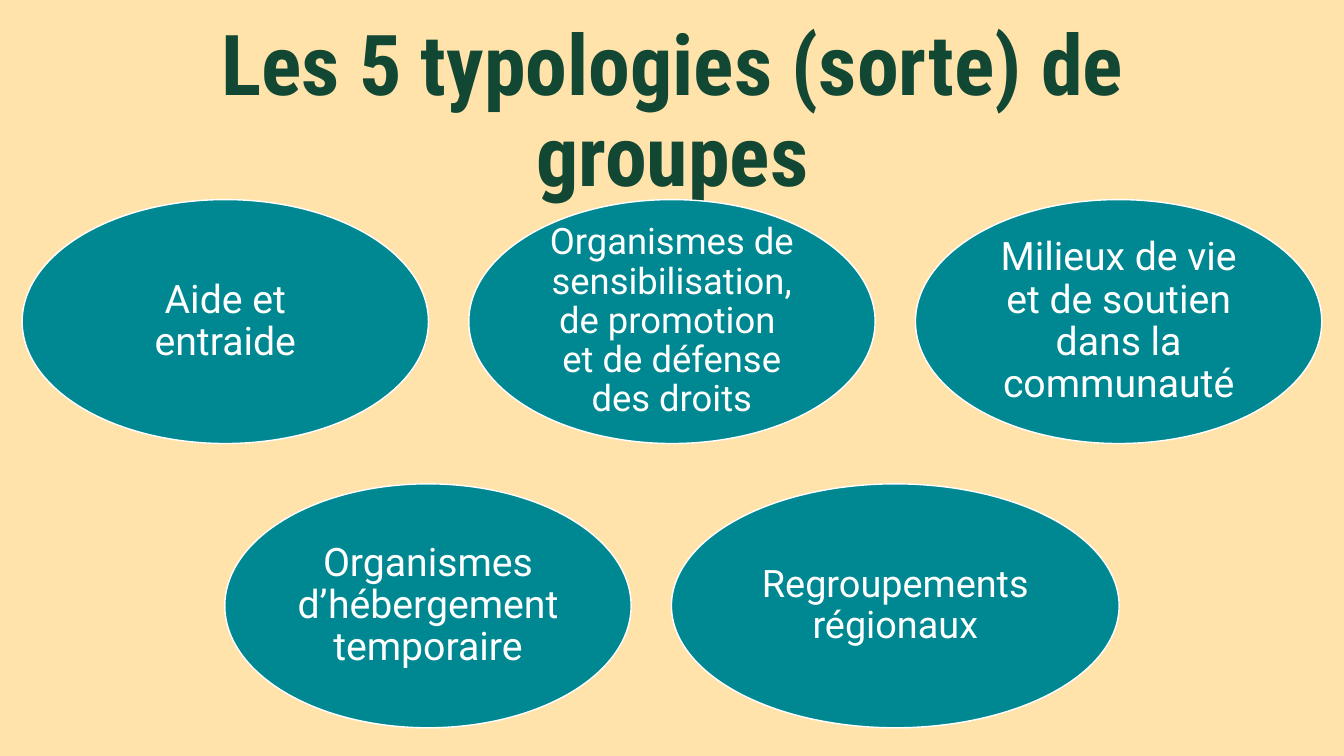
"""Build the slide on the five types of community groups."""
from dataclasses import dataclass

from pptx import Presentation
from pptx.dml.color import RGBColor
from pptx.enum.shapes import MSO_SHAPE
from pptx.enum.text import MSO_ANCHOR, PP_ALIGN
from pptx.slide import Slide
from pptx.text.text import TextFrame
from pptx.util import Inches, Pt

OVAL = MSO_SHAPE.OVAL
MIDDLE = MSO_ANCHOR.MIDDLE
CENTER = PP_ALIGN.CENTER


@dataclass(frozen=True)
class Theme:
    background: RGBColor = RGBColor.from_string("FFE3AB")
    heading: RGBColor = RGBColor.from_string("124733")
    teal: RGBColor = RGBColor.from_string("008892")
    white: RGBColor = RGBColor.from_string("FFFFFF")
    heading_font: str = "Roboto Condensed"
    body_font: str = "Roboto"
    heading_size: int = 60
    body_size: int = 28
    regional_size: int = 27
    advocacy_size: int = 26


@dataclass(frozen=True)
class GroupType:
    label: str
    size: int
    inset: float = 0.12
    width: float = 4.03


THEME = Theme()
SLIDE_WIDTH, SLIDE_HEIGHT = 13.33, 7.5
ROWS_TOP = 1.98
OVAL_HEIGHT = 2.42
GAP = 0.4
ROWS: list[list[GroupType]] = [
    [
        GroupType("Aide et entraide", THEME.body_size),
        GroupType(
            "Organismes de sensibilisation, de promotion \net de défense des droits",
            THEME.advocacy_size,
            inset=0.11,
        ),
        GroupType("Milieux de vie et de soutien dans la communauté", THEME.body_size),
    ],
    [
        GroupType("Organismes d’hébergement temporaire", THEME.body_size),
        GroupType("Regroupements régionaux", THEME.regional_size, inset=0.11, width=4.44),
    ],
]


def write_centred(
    frame: TextFrame, text: str, font: str, size: int, color: RGBColor, bold: bool = False
) -> None:
    """Fill a frame with one centred, wrapped paragraph."""
    frame.word_wrap = True
    frame.vertical_anchor = MIDDLE
    paragraph = frame.paragraphs[0]
    paragraph.text = text
    paragraph.alignment = CENTER
    paragraph.line_spacing = 0.9
    for run in paragraph.runs:
        run.font.name = font
        run.font.size = Pt(size)
        run.font.color.rgb = color
        run.font.bold = bold


def draw_heading(slide: Slide) -> None:
    """Draw the slide heading."""
    heading = slide.shapes.add_textbox(Inches(0.92), Inches(0.4), Inches(11.5), Inches(1.45))
    write_centred(
        heading.text_frame,
        "Les 5 typologies (sorte) de groupes",
        THEME.heading_font,
        THEME.heading_size,
        THEME.heading,
        bold=True,
    )


def draw_group_type(slide: Slide, group: GroupType, left: float, top: float) -> None:
    """Draw one labelled oval."""
    oval = slide.shapes.add_shape(
        OVAL, Inches(left), Inches(top), Inches(group.width), Inches(OVAL_HEIGHT)
    )
    oval.shadow.inherit = False
    oval.fill.solid()
    oval.fill.fore_color.rgb = THEME.teal
    oval.line.color.rgb = THEME.white
    oval.line.width = Pt(1)
    frame = oval.text_frame
    frame.margin_left = frame.margin_right = Inches(group.inset)
    frame.margin_top = frame.margin_bottom = Inches(group.inset)
    write_centred(frame, group.label, THEME.body_font, group.size, THEME.white)


def draw_row(slide: Slide, groups: list[GroupType], top: float) -> None:
    """Draw a row of ovals centred on the slide."""
    row_width = sum(group.width for group in groups) + GAP * (len(groups) - 1)
    left = (SLIDE_WIDTH - row_width) / 2
    for group in groups:
        draw_group_type(slide, group, left, top)
        left += group.width + GAP


def main() -> None:
    """Build and save the presentation."""
    presentation = Presentation()
    presentation.slide_width = Inches(SLIDE_WIDTH)
    presentation.slide_height = Inches(SLIDE_HEIGHT)
    slide = presentation.slides.add_slide(presentation.slide_layouts[6])
    slide.background.fill.solid()
    slide.background.fill.fore_color.rgb = THEME.background
    draw_heading(slide)
    for index, groups in enumerate(ROWS):
        draw_row(slide, groups, ROWS_TOP + index * (OVAL_HEIGHT + GAP))
    presentation.save("out.pptx")


if __name__ == "__main__":
    main()
